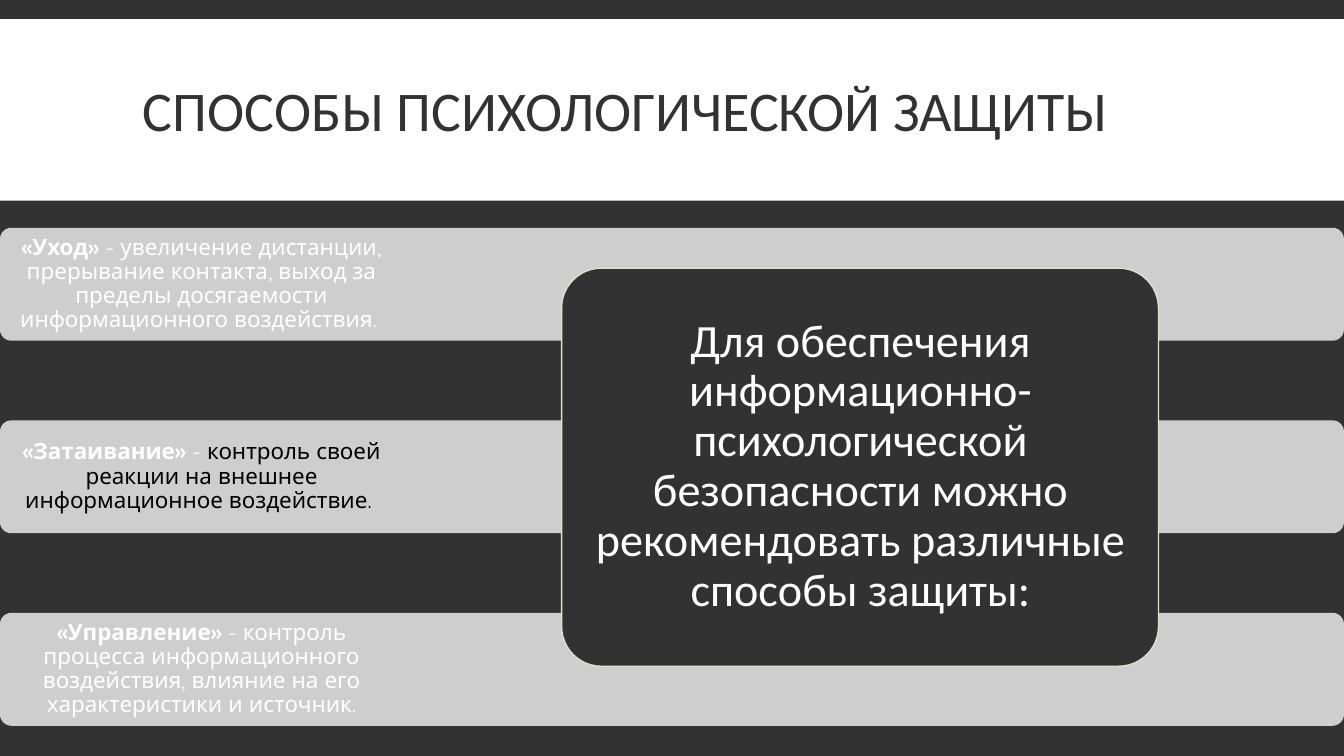
from pptx import Presentation
from pptx.dml.color import RGBColor
from pptx.enum.shapes import MSO_SHAPE
from pptx.enum.text import MSO_ANCHOR, PP_ALIGN
from pptx.util import Inches, Pt

DARK = RGBColor(0x32, 0x32, 0x32)
WHITE = RGBColor(0xFF, 0xFF, 0xFF)
BLACK = RGBColor(0, 0, 0)
GREY = RGBColor(0xCE, 0xCE, 0xCE)
CREAM = RGBColor(0xE3, 0xDE, 0xD1)
RECT, ROUND = MSO_SHAPE.RECTANGLE, MSO_SHAPE.ROUNDED_RECTANGLE
MIDDLE = MSO_ANCHOR.MIDDLE
LEFT, CENTER = PP_ALIGN.LEFT, PP_ALIGN.CENTER

TITLE = "СПОСОБЫ ПСИХОЛОГИЧЕСКОЙ ЗАЩИТЫ"
SUMMARY = ("Для обеспечения информационно-психологической безопасности "
           "можно рекомендовать различные способы защиты:")
METHODS = [
    [("«Уход»\u00a0", WHITE, True),
     ("- увеличение дистанции, прерывание контакта, выход за пределы "
      "досягаемости информационного воздействия. ", WHITE, False)],
    [("«Затаивание»", WHITE, True),
     ("\u00a0- ", WHITE, False),
     ("контроль своей реакции на внешнее информационное воздействие. ", BLACK, False)],
    [("«Управление»", WHITE, True),
     ("\u00a0- контроль процесса информационного воздействия, влияние на его "
      "характеристики и источник.", WHITE, False)],
]

WIDTH = 13.33
BAND_TOP, BAND_STEP, BAND_HEIGHT = 2.26, 1.91, 1.12

prs = Presentation()
prs.slide_width, prs.slide_height = Inches(WIDTH), Inches(7.5)
s = prs.slides.add_slide(prs.slide_layouts[6])
s.background.fill.solid()
s.background.fill.fore_color.rgb = DARK


def add_panel(kind, box, fill, line=None):
    sp = s.shapes.add_shape(kind, *map(Inches, box))
    sp.shadow.inherit = False
    sp.fill.solid()
    sp.fill.fore_color.rgb = fill
    if kind == ROUND:
        sp.adjustments[0] = 0.1
    if line is None:
        sp.line.fill.background()
    else:
        sp.line.color.rgb = line
        sp.line.width = Pt(1)


def add_text(box, runs, font, size, align, spacing, side, edge):
    tf = s.shapes.add_textbox(*map(Inches, box)).text_frame
    tf.word_wrap = True
    tf.vertical_anchor = MIDDLE
    tf.margin_left = tf.margin_right = Inches(side)
    tf.margin_top = tf.margin_bottom = Inches(edge)
    p = tf.paragraphs[0]
    p.alignment = align
    p.line_spacing = spacing
    for text, color, bold in runs:
        r = p.add_run()
        r.text = text
        r.font.name = font
        r.font.size = Pt(size)
        r.font.bold = bold
        r.font.color.rgb = color


add_panel(RECT, (0, 0.19, WIDTH, 1.8), WHITE)
add_text((1.32, 0.31, 10.7, 1.65), [(TITLE, DARK, False)],
         "Calibri", 40, LEFT, 0.85, 0.1, 0.05)

for i, runs in enumerate(METHODS):
    top = BAND_TOP + i * BAND_STEP
    add_panel(ROUND, (0, top, WIDTH, BAND_HEIGHT), GREY)
    add_text((0, top, 4, BAND_HEIGHT), runs, "Quicksand", 16, CENTER, 0.9, 0.12, 0.12)

add_panel(ROUND, (5.57, 2.66, 5.92, 3.95), DARK, CREAM)
add_text((5.69, 2.77, 5.69, 3.72), [(SUMMARY, WHITE, False)],
         "Calibri", 33, CENTER, 0.9, 0.14, 0.14)

prs.save("out.pptx")
